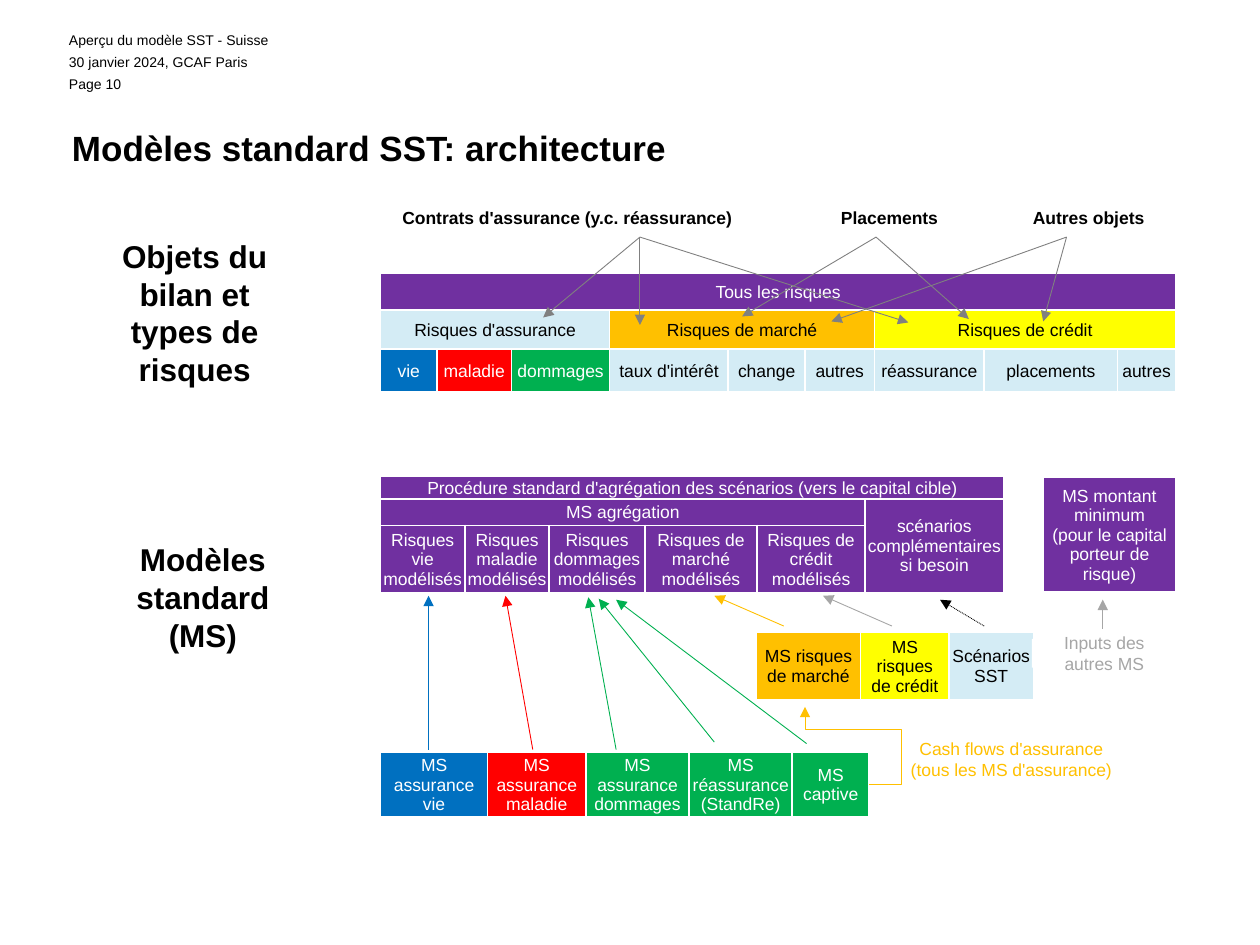
from dataclasses import dataclass

from lxml import etree
from pptx import Presentation
from pptx.dml.color import RGBColor
from pptx.enum.dml import MSO_LINE
from pptx.enum.shapes import MSO_CONNECTOR, MSO_SHAPE
from pptx.enum.text import MSO_ANCHOR, MSO_AUTO_SIZE, PP_ALIGN
from pptx.oxml.ns import qn
from pptx.util import Cm, Pt

LEFT, CENTER = PP_ALIGN.LEFT, PP_ALIGN.CENTER
TOP, MIDDLE = MSO_ANCHOR.TOP, MSO_ANCHOR.MIDDLE
STRAIGHT, ELBOW = MSO_CONNECTOR.STRAIGHT, MSO_CONNECTOR.ELBOW
RECT, FIXED, DOTS = MSO_SHAPE.RECTANGLE, MSO_AUTO_SIZE.NONE, MSO_LINE.ROUND_DOT


@dataclass(frozen=True)
class Theme:
    font: str = "Arial"
    small: int = 8
    body: int = 10
    side: int = 18
    title: int = 20
    rule: float = 0.5
    edge: int = 1
    black: str = "000000"
    white: str = "FFFFFF"
    purple: str = "7030A0"
    blue: str = "0070C0"
    red: str = "FF0000"
    green: str = "00B050"
    amber: str = "FFC000"
    yellow: str = "FFFF00"
    pale: str = "D4ECF5"
    gray: str = "808080"
    silver: str = "A6A6A6"


T = Theme()
DARK = (T.purple, T.blue, T.red, T.green)


def rgb(code):
    return RGBColor.from_string(code)


def write(frame, text, size, ink=T.black, bold=False, align=CENTER):
    frame.text = text
    frame.word_wrap = True
    for par in frame.paragraphs:
        par.alignment = align
        par._p.get_or_add_endParaRPr().set("sz", str(size * 100))
        for run in par.runs:
            font = run.font
            font.name, font.size, font.bold = T.font, Pt(size), bold
            font.color.rgb = rgb(ink)


def note(slide, box, text, size, **style):
    shape = slide.shapes.add_textbox(*map(Cm, box))
    write(shape.text_frame, text, size, **style)


def label(slide, box, text, ink):
    """Add a white rectangle with centred coloured text."""
    shape = slide.shapes.add_shape(RECT, *map(Cm, box))
    shape.shadow.inherit = False
    shape.fill.solid()
    shape.fill.fore_color.rgb = rgb(T.white)
    shape.line.fill.background()
    shape.text_frame.vertical_anchor = MIDDLE
    write(shape.text_frame, text, T.body, ink)


def paint(cell, fill):
    """Fill a cell and give it white borders and thin margins."""
    props = cell._tc.get_or_add_tcPr()
    for side in ("a:lnL", "a:lnR", "a:lnT", "a:lnB"):
        line = etree.SubElement(props, qn(side), w=str(Pt(T.edge)))
        solid = etree.SubElement(line, qn("a:solidFill"))
        etree.SubElement(solid, qn("a:srgbClr"), val=T.white)
    cell.fill.solid()
    cell.fill.fore_color.rgb = rgb(fill)
    cell.margin_left = cell.margin_right = cell.margin_top = Cm(0.03)
    cell.margin_bottom = 0
    cell.vertical_anchor = MIDDLE


def grid(slide, x, y, cols, rows, data, bold=False):
    """Draw a table; each entry is text, fill, then column and row spans."""
    area = map(Cm, (x, y, sum(cols), sum(rows)))
    table = slide.shapes.add_table(len(rows), len(cols), *area).table
    table.first_row = table.horz_banding = False
    for col, size in zip(table.columns, cols):
        col.width = Cm(size)
    for row, size in zip(table.rows, rows):
        row.height = Cm(size)
    for r, line in enumerate(data):
        c = 0
        for text, fill, *span in line:
            wide, deep = span or (1, 1)
            for i in range(r, r + deep):
                for j in range(c, c + wide):
                    paint(table.cell(i, j), fill)
            cell = table.cell(r, c)
            if wide * deep > 1:
                cell.merge(table.cell(r + deep - 1, c + wide - 1))
            ink = T.white if fill in DARK else T.black
            write(cell.text_frame, text, T.body, ink, bold)
            c += wide


def arrow(slide, x, y, ends, ink, kind=STRAIGHT):
    """Draw an arrow between two points given relative to x, y."""
    x1, y1, x2, y2 = ends
    link = slide.shapes.add_connector(
        kind, Cm(x + x1), Cm(y + y1), Cm(x + x2), Cm(y + y2))
    link.line.color.rgb = rgb(ink)
    link.line.width = Pt(T.rule)
    tip = etree.SubElement(link.line._get_or_add_ln(), qn("a:tailEnd"))
    tip.set("type", "triangle")
    etree.SubElement(link._element.spPr, qn("a:effectLst"))
    return link


def header(slide, box):
    x, y, w, h = box
    lines = ("Aperçu du modèle SST - Suisse", "30 janvier 2024, GCAF Paris", "Page 10")
    for i, text in enumerate(lines):
        note(slide, (x, y + i * h / 3, w, 0.6), text, T.small, align=LEFT)


def heading(slide, box):
    shape = slide.shapes.title
    shape.left, shape.top, shape.width, shape.height = map(Cm, box)
    frame = shape.text_frame
    write(frame, "Modèles standard SST: architecture", T.title, bold=True, align=LEFT)
    frame.auto_size, frame.vertical_anchor = FIXED, TOP
    frame.margin_left = frame.margin_right = 0
    frame.margin_top = frame.margin_bottom = 0


def risks(slide, box):
    """Balance sheet objects, the risk types below and the links between."""
    x, y, w, h = box
    note(slide, (x - 5.94, y + 0.59, 4.39, 3.33),
         "Objets du bilan et types de risques", T.side, bold=True)
    cols = (1.14, 1.5, 1.98, 2.39, 1.55, 1.4, 2.21, 2.69, 1.17)
    kinds = ("taux d'intérêt", "change", "autres", "réassurance", "placements", "autres")
    grid(slide, x, y + 1.45, cols, (0.74, 0.79, 0.86), [
        [("Tous les risques", T.purple, 9, 1)],
        [("Risques d'assurance", T.pale, 3, 1), ("Risques de marché", T.amber, 3, 1),
         ("Risques de crédit", T.yellow, 3, 1)],
        [("vie", T.blue), ("maladie", T.red), ("dommages", T.green)]
        + [(kind, T.pale) for kind in kinds]])
    heads = ("Contrats d'assurance (y.c. réassurance)", "", "Placements", "", "Autres objets")
    grid(slide, x, y, (7.52, 1.14, 3.2, 1.17, 2.49), (0.66,),
         [[(head, T.white) for head in heads]], bold=True)
    fans = {5.23: ((3.28, 2.34), (5.23, 2.49), (10.64, 2.44)),
            9.99: ((7.29, 2.32), (11.86, 2.37)),
            13.83: ((9.09, 2.42), (13.36, 2.42))}
    for start, goals in fans.items():
        for goal in goals:
            arrow(slide, x, y, (start, 0.72, *goal), T.gray)


def models(slide, box):
    """Standard models feeding the aggregation."""
    x, y, w, h = box
    note(slide, (x - 5.51, y + 1.17, 3.86, 2.57),
         "Modèles standard (MS)", T.side, bold=True)
    names = ("vie", "maladie", "dommages", "de marché", "de crédit")
    grid(slide, x, y, (1.7, 1.7, 1.93, 2.26, 2.18, 2.79), (0.46, 0.53, 1.35), [
        [("Procédure standard d'agrégation des scénarios (vers le capital cible)",
          T.purple, 6, 1)],
        [("MS agrégation", T.purple, 5, 1),
         ("scénarios complémentaires\nsi besoin", T.purple, 1, 2)],
        [(f"Risques {name}\nmodélisés", T.purple) for name in names]])
    grid(slide, x, y + 5.56, (2.16, 1.98, 2.08, 2.08, 1.55), (1.17,), [[
        ("MS assurance vie", T.blue), ("MS assurance maladie", T.red),
        ("MS assurance dommages", T.green), ("MS réassurance (StandRe)", T.green),
        ("MS captive", T.green)]])
    grid(slide, x + 13.36, y + 0.03, (2.67,), (2.29,), [[
        ("MS montant minimum\n(pour le capital porteur de risque)", T.purple)]])
    grid(slide, x + 7.57, y + 3.15, (2.11, 1.78, 1.7), (1.35,), [[
        ("MS risques de marché", T.amber), ("MS risques\vde crédit", T.yellow),
        ("Scénarios SST", T.pale)]])
    label(slide, (x + 10.34, y + 5.23, 4.75, 0.94),
          "Cash flows d'assurance (tous les MS d'assurance)", T.amber)
    label(slide, (x + 13.13, y + 3.28, 2.92, 0.58), "Inputs des autres MS", T.silver)
    for ink, *ends in (
            (T.blue, 0.97, 5.51, 0.97, 2.41), (T.red, 3.07, 5.51, 2.52, 2.41),
            (T.green, 4.75, 5.51, 4.19, 2.44), (T.green, 6.73, 5.36, 4.4, 2.47),
            (T.green, 8.59, 5.39, 4.75, 2.49), (T.amber, 8.13, 3.02, 6.73, 2.41),
            (T.silver, 10.31, 3.02, 8.92, 2.41), (T.silver, 14.56, 3.07, 14.56, 2.49)):
        arrow(slide, x, y, ends, ink)
    link = arrow(slide, x, y, (12.17, 3.02, 11.28, 2.49), T.black)
    link.line.dash_style = DOTS
    cash = arrow(slide, x, y, (9.86, 6.22, 8.56, 4.65), T.amber, ELBOW)
    geom = cash._element.spPr.find(qn("a:prstGeom"))
    geom.set("prst", "bentConnector4")
    for name, value in (("adj1", -48800), ("adj2", 70600)):
        etree.SubElement(geom.find(qn("a:avLst")), qn("a:gd"),
                         name=name, fmla=f"val {value}")


def main():
    deck = Presentation()
    deck.slide_width, deck.slide_height = Cm(25.4), Cm(19.05)
    slide = deck.slides.add_slide(deck.slide_layouts[5])
    heading(slide, (1.45, 2.54, 22.5, 1.4))
    header(slide, (1.14, 0.51, 17.1, 1.33))
    risks(slide, (7.67, 4.06, 16.03, 3.86))
    models(slide, (7.67, 9.6, 16.03, 6.86))
    deck.save("out.pptx")


if __name__ == "__main__":
    main()
